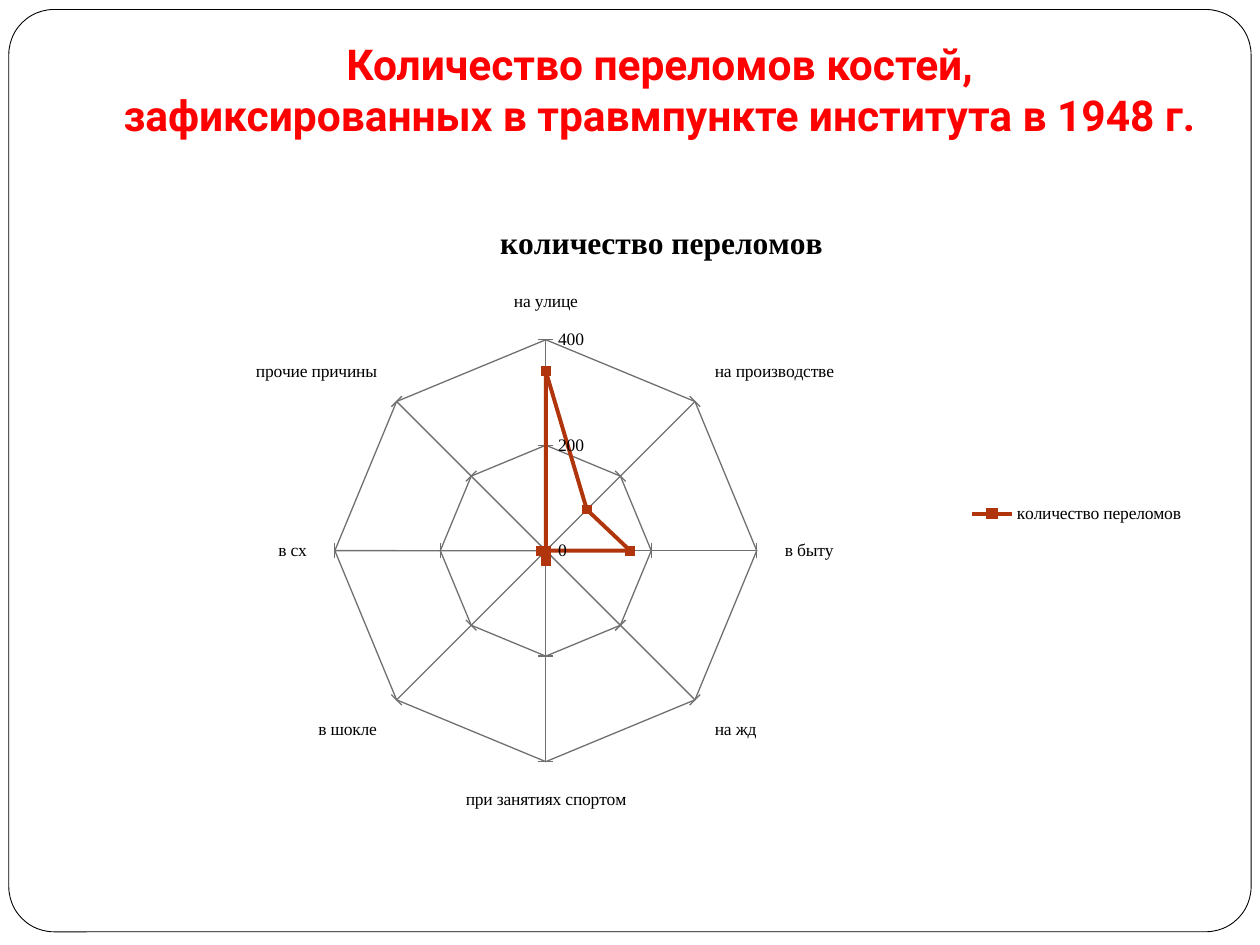
from dataclasses import dataclass

from lxml import etree
from pptx import Presentation
from pptx import util as u
from pptx.chart import data as chart_data
from pptx.dml.color import RGBColor
from pptx.enum import chart as chart_enum, shapes, text
from pptx.oxml import ns

COLORS = {
    "paper": "FFFFFF",
    "ink": "000000",
    "heading": "FF0000",
    "series": "B0350C",
    "grid": "707070",
}
WIDTH, HEIGHT = u.Inches(10), u.Inches(7.5)
CHART_FONT = "Times New Roman"
SERIES_NAME = "количество переломов"
HEADING = ("Количество переломов костей,", "зафиксированных в травмпункте института в 1948 г.")


@dataclass(frozen=True)
class Area:
    left: float
    top: float
    width: float
    height: float

    def box(self) -> tuple[int, int, int, int]:
        return (int(self.left * WIDTH), int(self.top * HEIGHT),
                int(self.width * WIDTH), int(self.height * HEIGHT))


@dataclass(frozen=True)
class Cause:
    label: str
    fractures: int


FRAME = Area(0.007, 0.01, 0.986, 0.976)
TITLE = Area(0.047, 0.04, 0.953, 0.12)
CHART = Area(0.1, 0.21, 0.85, 0.667)
PLOT = Area(0.195, 0.224, 0.394, 0.67)
CAUSES = (
    Cause("на улице", 340),
    Cause("на производстве", 110),
    Cause("в быту", 160),
    Cause("на жд", 0),
    Cause("при занятиях спортом", 20),
    Cause("в шокле", 0),
    Cause("в сх", 10),
    Cause("прочие причины", 0),
)


def color(name: str) -> RGBColor:
    return RGBColor.from_string(COLORS[name])


def style_font(font, name: str, size: float, bold: bool, ink: str) -> None:
    font.name = name
    font.size = u.Pt(size)
    font.bold = bold
    font.color.rgb = color(ink)


def style_line(line, ink: str, width: float) -> None:
    line.color.rgb = color(ink)
    line.width = u.Pt(width)


def draw_frame(slide) -> None:
    frame = slide.shapes.add_shape(shapes.MSO_SHAPE.ROUNDED_RECTANGLE, *FRAME.box())
    frame.adjustments[0] = 0.049
    frame.shadow.inherit = False
    frame.fill.solid()
    frame.fill.fore_color.rgb = color("paper")
    style_line(frame.line, "ink", 0.5)


def draw_heading(slide) -> None:
    frame = slide.shapes.add_textbox(*TITLE.box()).text_frame
    frame.word_wrap = True
    frame.margin_top = frame.margin_bottom = 0
    frame.vertical_anchor = text.MSO_ANCHOR.TOP
    for index, line in enumerate(HEADING):
        paragraph = frame.add_paragraph() if index else frame.paragraphs[0]
        paragraph.text = line
        paragraph.alignment = text.PP_ALIGN.CENTER
        style_font(paragraph.font, "Roboto", 24.3, True, "heading")


def place_plot(chart, area: Area) -> None:
    plot_area = chart.plots[0]._element.getparent()
    for old in plot_area.findall(ns.qn("c:layout")):
        plot_area.remove(old)
    layout = etree.Element(ns.qn("c:layout"))
    plot_area.insert(0, layout)
    manual = etree.SubElement(layout, ns.qn("c:manualLayout"))
    settings = (
        ("layoutTarget", "inner"), ("xMode", "edge"), ("yMode", "edge"),
        ("x", area.left), ("y", area.top), ("w", area.width), ("h", area.height),
    )
    for tag, value in settings:
        etree.SubElement(manual, ns.qn(f"c:{tag}")).set("val", str(value))


def draw_chart(slide) -> None:
    data = chart_data.CategoryChartData()
    data.categories = [cause.label for cause in CAUSES]
    data.add_series(SERIES_NAME, [cause.fractures for cause in CAUSES])
    chart = slide.shapes.add_chart(
        chart_enum.XL_CHART_TYPE.RADAR_MARKERS, *CHART.box(), data).chart
    style_font(chart.font, CHART_FONT, 10, False, "ink")

    chart.has_title = True
    title = chart.chart_title.text_frame
    title.text = SERIES_NAME
    style_font(title.paragraphs[0].font, CHART_FONT, 18, True, "ink")

    chart.has_legend = True
    chart.legend.position = chart_enum.XL_LEGEND_POSITION.RIGHT
    chart.legend.include_in_layout = False

    values = chart.value_axis
    values.minimum_scale, values.maximum_scale, values.major_unit = 0, 400, 200
    values.major_tick_mark = chart_enum.XL_TICK_MARK.CROSS
    values.tick_labels.number_format = "General"
    values.tick_labels.number_format_is_linked = False
    chart.category_axis.major_tick_mark = chart_enum.XL_TICK_MARK.OUTSIDE
    for axis in (chart.category_axis, values):
        axis.has_major_gridlines = True
        style_line(axis.major_gridlines.format.line, "grid", 0.75)
        style_line(axis.format.line, "grid", 0.75)

    chart.plots[0].vary_by_categories = False
    series = chart.plots[0].series[0]
    series.smooth = False
    style_line(series.format.line, "series", 2.25)
    series.marker.style = chart_enum.XL_MARKER_STYLE.SQUARE
    series.marker.size = 5
    series.marker.format.fill.solid()
    series.marker.format.fill.fore_color.rgb = color("series")
    style_line(series.marker.format.line, "series", 0.75)
    place_plot(chart, PLOT)


def main() -> None:
    presentation = Presentation()
    presentation.slide_width, presentation.slide_height = WIDTH, HEIGHT
    slide = presentation.slides.add_slide(presentation.slide_layouts[6])
    draw_frame(slide)
    draw_heading(slide)
    draw_chart(slide)
    presentation.save("out.pptx")


if __name__ == "__main__":
    main()
